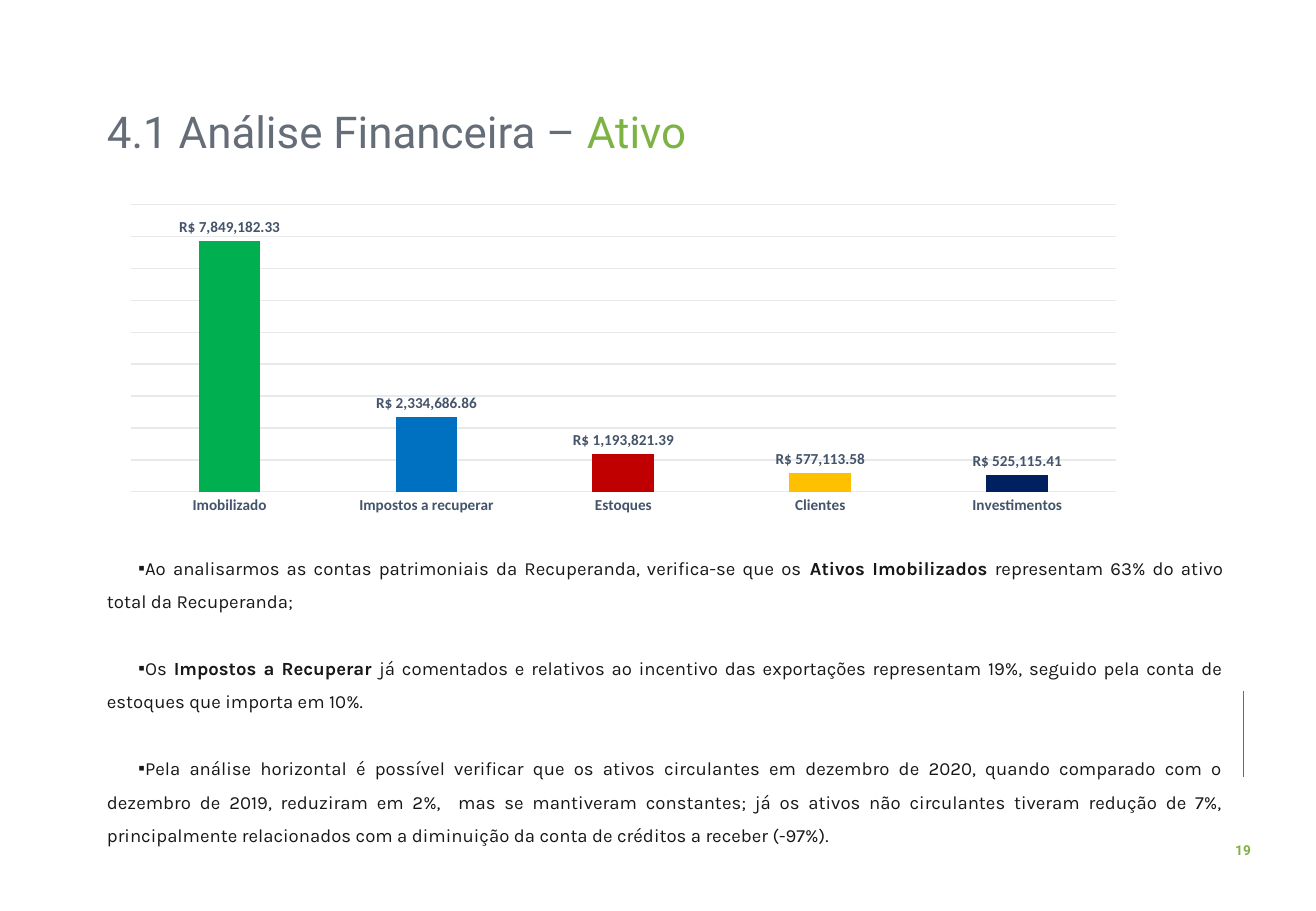
import lxml.etree
import pptx
import pptx.chart.data
import pptx.dml.color
import pptx.enum.chart
import pptx.enum.shapes
import pptx.enum.text
import pptx.oxml.ns
import pptx.util

Inches = pptx.util.Inches
Pt = pptx.util.Pt
qn = pptx.oxml.ns.qn
ALIGN = pptx.enum.text.PP_ALIGN

COLORS = {
    "gray": "656D78", "lime": "7CB342", "ink": "181717",
    "slate": "44546A", "grid": "E7E9EB",
}
MONEY = '"R$"\\ #,##0.00'
ASSETS = [
    ("Imobilizado", 7849182.33, "00B050"),
    ("Impostos a recuperar", 2334686.86, "0070C0"),
    ("Estoques", 1193821.39, "C00000"),
    ("Clientes", 577113.58, "FFC000"),
    ("Investimentos", 525115.41, "002060"),
]
# Each note is split into plain, bold and plain text.
NOTES = [
    ("Ao analisarmos as contas patrimoniais da Recuperanda, verifica-se que os ",
     "Ativos Imobilizados",
     " representam 63% do ativo total da Recuperanda;"),
    ("Os ", "Impostos a Recuperar ",
     "já comentados e relativos ao incentivo das exportações representam 19%, "
     "seguido pela conta de estoques que importa em 10%."),
    ("Pela análise horizontal é possível verificar que os ativos circulantes em "
     "dezembro de 2020, quando comparado com o dezembro de 2019, reduziram em "
     "2%,  mas se mantiveram constantes; já os ativos não circulantes tiveram "
     "redução de 7%, principalmente relacionados com a diminuição da conta de "
     "créditos a receber (-97%).",),
]


def rgb(value):
    return pptx.dml.color.RGBColor.from_string(value)


def style(font, name, size, color, bold=False):
    font.name, font.size, font.bold = name, Pt(size), bold
    font.color.rgb = rgb(color)


def place(shape, box):
    shape.left, shape.top, shape.width, shape.height = map(Inches, box)
    frame = shape.text_frame
    frame.auto_size = pptx.enum.text.MSO_AUTO_SIZE.NONE
    frame.vertical_anchor = pptx.enum.text.MSO_ANCHOR.TOP
    frame.word_wrap = True
    return frame


def add_title(slide, box):
    para = place(slide.shapes.title, box).paragraphs[0]
    para.alignment = ALIGN.LEFT
    para.line_spacing = 0.9
    for text, color in (("4.1 Análise Financeira – ", "gray"), ("Ativo", "lime")):
        run = para.add_run()
        run.text = text
        style(run.font, "Roboto", 26, COLORS[color])


def add_bars(slide, box):
    data = pptx.chart.data.CategoryChartData(number_format=MONEY)
    data.categories = [name for name, _, _ in ASSETS]
    data.add_series("Ativo", [value for _, value, _ in ASSETS])
    kind = pptx.enum.chart.XL_CHART_TYPE.COLUMN_CLUSTERED
    chart = slide.shapes.add_chart(kind, *map(Inches, box), data).chart
    chart.has_legend = chart.has_title = False
    style(chart.font, "Calibri", 10, COLORS["gray"])

    axis = chart.value_axis
    axis.visible = False
    axis.minimum_scale, axis.maximum_scale, axis.major_unit = 0, 9e6, 1e6
    axis.has_major_gridlines = True
    cats = chart.category_axis
    cats.major_tick_mark = pptx.enum.chart.XL_TICK_MARK.NONE
    style(cats.tick_labels.font, "Calibri", 9, COLORS["slate"], True)
    for line in (axis.major_gridlines.format.line, cats.format.line):
        line.color.rgb = rgb(COLORS["grid"])
        line.width = Pt(0.75)

    plot = chart.plots[0]
    plot.gap_width, plot.overlap = 219, -27
    plot.vary_by_categories = False
    for index, (_, _, color) in enumerate(ASSETS):
        fill = plot.series[0].points[index].format.fill
        fill.solid()
        fill.fore_color.rgb = rgb(color)
    plot.has_data_labels = True
    labels = plot.data_labels
    labels.show_value = True
    labels.number_format, labels.number_format_is_linked = MONEY, False
    labels.position = pptx.enum.chart.XL_LABEL_POSITION.OUTSIDE_END
    style(labels.font, "Calibri", 9, COLORS["slate"], True)
    set_plot(chart, x=0.02, y=0.02, w=0.96, h=0.89)


def set_plot(chart, **sizes):
    """Fix the inner plot area as shares of the chart."""
    area = chart.plots[0]._element.getparent()
    for old in area.findall(qn("c:layout")):
        area.remove(old)
    layout = lxml.etree.Element(qn("c:layout"))
    area.insert(0, layout)
    manual = lxml.etree.SubElement(layout, qn("c:manualLayout"))
    parts = [("layoutTarget", "inner"), ("xMode", "edge"), ("yMode", "edge")]
    for tag, value in parts + list(sizes.items()):
        lxml.etree.SubElement(manual, qn("c:" + tag)).set("val", str(value))


def add_notes(slide, box):
    frame = place(slide.placeholders[1], box)
    for index, note in enumerate(NOTES):
        para = frame.add_paragraph() if index else frame.paragraphs[0]
        props = para._p.get_or_add_pPr()
        props.set("marL", "0")
        props.set("indent", str(Inches(0.26)))
        lxml.etree.SubElement(props, qn("a:buChar")).set("char", "▪")
        para.alignment = ALIGN.JUSTIFY
        para.line_spacing = 1.5
        para.space_before = Pt(19.8 if index else 0)
        for part, text in enumerate(note):
            run = para.add_run()
            run.text = text
            style(run.font, "Karla", 11, COLORS["ink"], part == 1)


def add_number(slide, box):
    """Add the page number and the rule above it."""
    left, top, width, _ = box
    mid = left + width / 2
    kind = pptx.enum.shapes.MSO_CONNECTOR.STRAIGHT
    ends = (mid, top - 1.19, mid, top - 0.48)
    rule = slide.shapes.add_connector(kind, *map(Inches, ends))
    rule.line.color.rgb = rgb(COLORS["gray"])
    rule.line.width = Pt(0.5)
    lxml.etree.SubElement(rule._element.spPr, qn("a:effectLst"))
    frame = place(slide.shapes.add_textbox(0, 0, 0, 0), box)
    frame.word_wrap = False
    frame.text = "19"
    para = frame.paragraphs[0]
    para.alignment = ALIGN.CENTER
    style(para.runs[0].font, "Roboto", 8.1, COLORS["lime"], True)


def main():
    deck = pptx.Presentation()
    deck.slide_width, deck.slide_height = Inches(10.83), Inches(7.5)
    slide = deck.slides.add_slide(deck.slide_layouts[1])
    add_number(slide, (10.06, 6.88, 0.34, 0.24))
    add_title(slide, (0.78, 0.86, 8.18, 0.53))
    add_notes(slide, (0.78, 4.44, 9.39, 2.6))
    add_bars(slide, (0.91, 1.63, 8.44, 2.66))
    deck.save("out.pptx")


if __name__ == "__main__":
    main()
